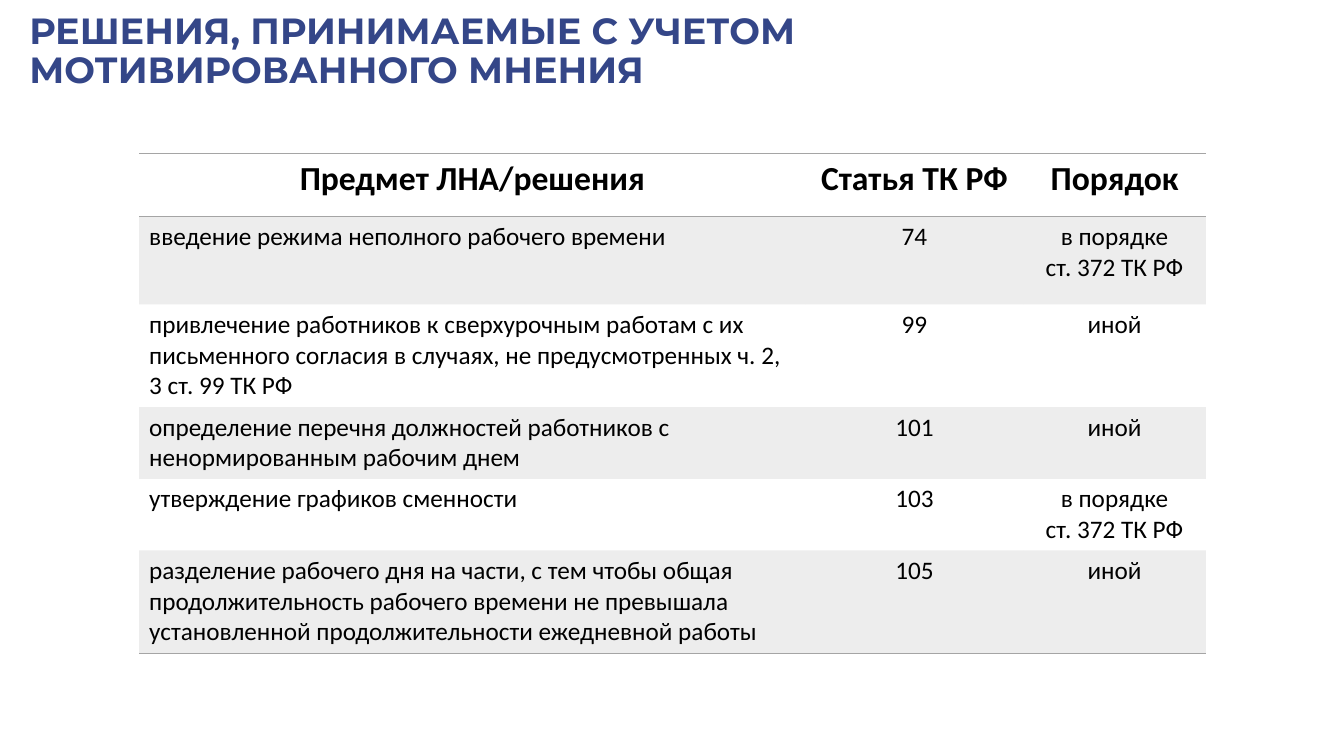
from lxml.etree import SubElement
from pptx import Presentation
from pptx.dml.color import RGBColor
from pptx.enum.text import MSO_ANCHOR, MSO_AUTO_SIZE, PP_ALIGN
from pptx.oxml import parse_xml
from pptx.oxml.ns import nsdecls, qn
from pptx.util import Inches, Pt

COLORS = {"title": "344688", "text": "000000", "gray": "A5A5A5"}
COLUMN_WIDTHS = [6.61, 2.16, 1.81]
ROW_HEIGHTS = [0.63, 0.87, 1.02, 0.71, 0.71, 1.02]
BY_ARTICLE_372 = "в порядке\nст. 372 ТК РФ"
ROWS = [
    ("Предмет ЛНА/решения", "Статья ТК РФ", "Порядок"),
    ("введение режима неполного рабочего времени", "74", BY_ARTICLE_372),
    ("привлечение работников к сверхурочным работам с их письменного согласия "
     "в случаях, не предусмотренных ч. 2, 3 ст. 99 ТК РФ", "99", "иной"),
    ("определение перечня должностей работников с ненормированным рабочим днем",
     "101", "иной"),
    ("утверждение графиков сменности", "103", BY_ARTICLE_372),
    ("разделение рабочего дня на части, с тем чтобы общая продолжительность "
     "рабочего времени не превышала установленной продолжительности ежедневной "
     "работы", "105", "иной"),
]
NO_STYLE_NO_GRID = "{2D5ABB26-0587-4C30-8999-92F81FD0307C}"


def add_run(paragraph, text, font_name, size, color, bold):
    run = paragraph.add_run()
    run.text = text
    run.font.name = font_name
    run.font.size = Pt(size)
    run.font.bold = bold
    run.font.color.rgb = RGBColor.from_string(COLORS[color])


def add_border(cell, side):
    cell._tc.get_or_add_tcPr().append(parse_xml(
        f'<a:{side} {nsdecls("a")} w="{Pt(1)}"><a:solidFill>'
        f'<a:srgbClr val="{COLORS["gray"]}"/></a:solidFill></a:{side}>'))


presentation = Presentation()
presentation.slide_width = Inches(13.33)
presentation.slide_height = Inches(7.5)
slide = presentation.slides.add_slide(presentation.slide_layouts[5])

title = slide.shapes.title
title.left, title.top = Inches(0.19), Inches(0.19)
title.width, title.height = Inches(10.41), Inches(0.66)
title_frame = title.text_frame
title_frame.word_wrap = True
title_frame.auto_size = MSO_AUTO_SIZE.NONE
title_frame.vertical_anchor = MSO_ANCHOR.MIDDLE
paragraph = title_frame.paragraphs[0]
paragraph.alignment = PP_ALIGN.LEFT
paragraph.line_spacing = 0.9
add_run(paragraph, "РЕШЕНИЯ, ПРИНИМАЕМЫЕ С УЧЕТОМ МОТИВИРОВАННОГО МНЕНИЯ",
        "Montserrat", 26, "title", True)

table_frame = slide.shapes.add_table(
    len(ROWS), len(COLUMN_WIDTHS), Inches(1.38), Inches(1.52),
    Inches(sum(COLUMN_WIDTHS)), Inches(sum(ROW_HEIGHTS)))
table = table_frame.table
table.first_row = False
table.horz_banding = False
table._tbl.tblPr.find(qn("a:tableStyleId")).text = NO_STYLE_NO_GRID
for column, width in zip(table.columns, COLUMN_WIDTHS):
    column.width = Inches(width)
for row, height in zip(table.rows, ROW_HEIGHTS):
    row.height = Inches(height)

for row_index, texts in enumerate(ROWS):
    is_header = row_index == 0
    for column_index, text in enumerate(texts):
        cell = table.cell(row_index, column_index)
        if is_header:
            add_border(cell, "lnT")
        if is_header or row_index == len(ROWS) - 1:
            add_border(cell, "lnB")
        if row_index % 2:
            cell.fill.solid()
            cell.fill.fore_color.rgb = RGBColor.from_string(COLORS["gray"])
            color_element = cell._tc.tcPr.find(qn("a:solidFill"))[0]
            SubElement(color_element, qn("a:alpha"), val="20000")
        else:
            cell.fill.background()
        centered = is_header or column_index > 0
        for line_index, line in enumerate(text.split("\n")):
            cell_frame = cell.text_frame
            paragraph = cell_frame.add_paragraph() if line_index else cell_frame.paragraphs[0]
            paragraph.alignment = PP_ALIGN.CENTER if centered else PP_ALIGN.LEFT
            add_run(paragraph, line, "Calibri", 24 if is_header else 18, "text", is_header)

presentation.save("out.pptx")
